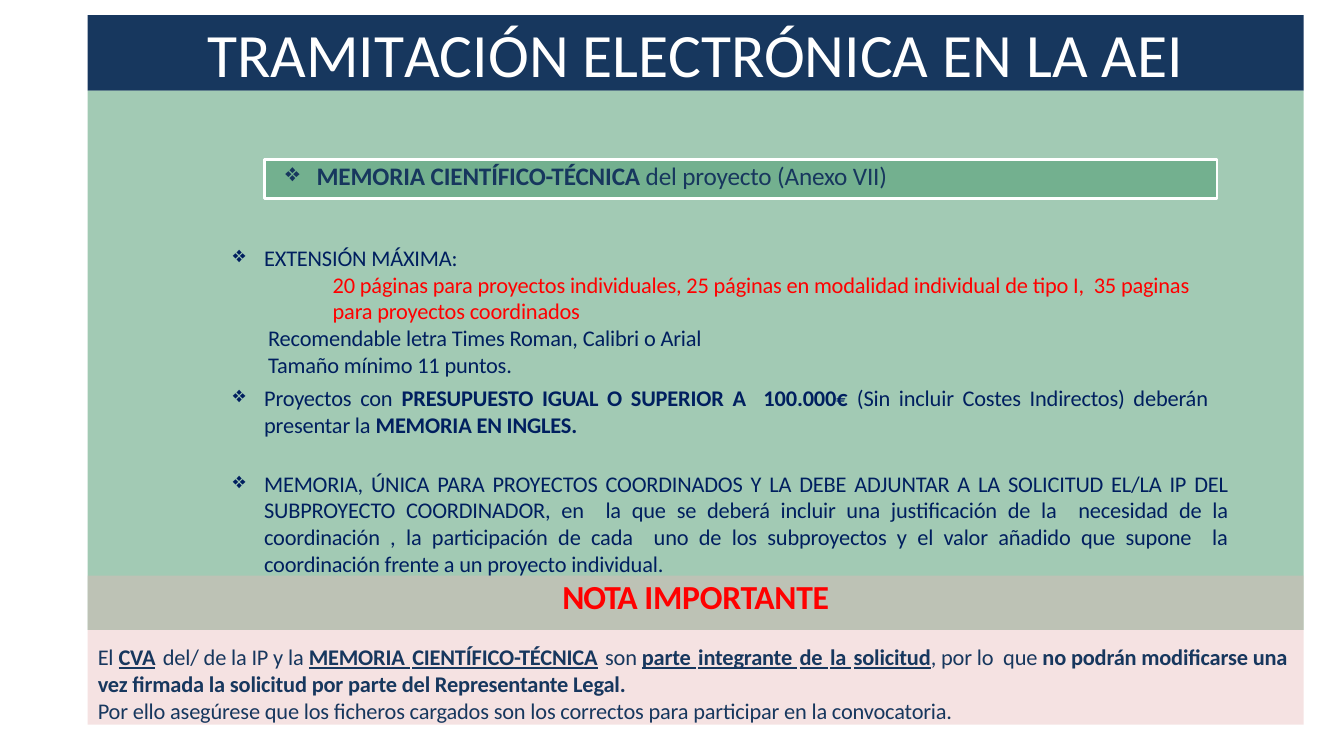
from dataclasses import dataclass
from lxml.etree import SubElement
from pptx import Presentation
from pptx.dml.color import RGBColor
from pptx.enum.shapes import MSO_SHAPE
from pptx.enum.text import MSO_ANCHOR, PP_ALIGN
from pptx.oxml.ns import qn
from pptx.util import Inches, Pt


@dataclass(frozen=True)
class Theme:
    font: str = "Calibri"
    navy: str = "17375E"
    text: str = "001F5F"
    red: str = "FF0000"
    white: str = "FFFFFF"
    green: str = "46976B"
    pink: str = "E6B8B8"
    title: int = 44
    note: int = 24
    heading: int = 18
    body: int = 16
    tracking: float = -0.1
    wide: float = 1.6


THEME = Theme()


@dataclass(frozen=True)
class Para:
    """Runs are (text, flags, tracking): b is bold, u is underlined."""
    runs: tuple
    size: int = THEME.body
    color: str = THEME.text
    indent: float = 0
    bullet: bool = False
    align: PP_ALIGN = PP_ALIGN.LEFT
    before: float = 0


def run(text, flags="", tracking=THEME.tracking):
    return text, flags, tracking


def underlined(phrase):
    """Bold underlined words, parted by wide spaces."""
    runs = []
    for word in phrase.split():
        if runs:
            runs.append(run(" ", "bu", THEME.wide))
        runs.append(run(word, "bu"))
    return runs


WIDE_GAP = run(" ", "b", THEME.wide)

TITLE = Para((run("TRAMI", "", 0), run("T", "", -1.8),
              run("ACIÓN ELECTRÓNICA EN LA AEI", "", 0)),
             THEME.title, THEME.white, align=PP_ALIGN.CENTER)

HEADING = Para((run("MEMORIA CIENTÍFICO-TÉCNICA ", "b"), run("del proyecto (Anexo VII)")),
               THEME.heading, THEME.navy, 0.52, True)

# (top, width, height, paragraphs)
REQUIREMENTS = [
    (2.41, 9.9, 1.36, [
        Para((run("EXTENSIÓN MÁXIMA:"),), indent=0.33, bullet=True),
        Para((run("20 páginas para proyectos individuales, 25 páginas en modalidad "
                  "individual de tipo I,  35 paginas para proyectos coordinados"),),
             color=THEME.red, indent=1.01),
        Para((run("Recomendable letra Times Roman, Calibri o Arial"),), indent=0.37),
        Para((run("Tamaño mínimo 11 puntos."),), indent=0.37),
    ]),
    (3.8, 9.78, 0.55, [
        Para((run("Proyectos con "),
              run("PRESUPUESTO IGUAL O SUPERIOR A  100.000€ ", "b"),
              run("(Sin incluir Costes Indirectos) deberán  presentar la "),
              run("MEMORIA EN INGLES.", "b")),
             indent=0.33, bullet=True, align=PP_ALIGN.JUSTIFY),
    ]),
    (4.65, 9.9, 1.09, [
        Para((run("MEMORIA, ÚNICA PARA PROYECTOS COORDINADOS Y LA DEBE ADJUNTAR A LA "
                  "SOLICITUD EL/LA IP DEL SUBPROYECTO COORDINADOR, en  la que se deberá "
                  "incluir una justificación de la  necesidad de la coordinación , la "
                  "participación de cada  uno de los subproyectos y el valor añadido que "
                  "supone  la coordinación frente a un proyecto individual."),),
             indent=0.33, bullet=True, align=PP_ALIGN.JUSTIFY),
    ]),
]

NOTE = [
    Para((run("NOTA ", "b", -0.7), run("IMPORTANTE", "b", -0.2)),
         THEME.note, THEME.red, align=PP_ALIGN.CENTER),
    Para((run("El "), *underlined("CVA"), WIDE_GAP, run("del/ de la IP y la "),
          *underlined("MEMORIA CIENTÍFICO-TÉCNICA"), WIDE_GAP, run("son "),
          *underlined("parte integrante de la solicitud"), run(", por lo  que "),
          run("no podrán modificarse una vez firmada la solicitud por parte del "
              "Representante Legal.", "b")),
         color=THEME.navy, indent=0.1, before=19.3),
    Para((run("Por ello asegúrese que los ficheros cargados son los correctos para "
              "participar en la convocatoria."),), color=THEME.navy, indent=0.1),
]

SLIDE_SIZE = (13.33, 7.5)
LEFT, WIDTH = 0.87, 12.06
TITLE_TOP, TITLE_HEIGHT = 0.15, 0.75
BAND_TOP, BAND_HEIGHT = TITLE_TOP + TITLE_HEIGHT, 5.35
NOTE_TOP, NOTE_HEIGHT = 5.71, 1.48
HEADING_BOX = (2.62, 1.58, 9.45, 0.39)
REQUIREMENTS_LEFT = 2.29
HANGING = 0.31
INSET_TOP = 0.01


def set_indent(paragraph, indent, bullet):
    props = paragraph._p.get_or_add_pPr()
    props.set("marL", str(Inches(indent)))
    props.set("indent", str(Inches(-HANGING if bullet else 0)))
    if bullet:
        SubElement(props, qn("a:buChar")).set("char", "❖")
        tabs = SubElement(props, qn("a:tabLst"))
        SubElement(tabs, qn("a:tab"), pos=str(Inches(indent)), algn="l")
    else:
        SubElement(props, qn("a:buNone"))


def write(frame, paras, inset_top=INSET_TOP):
    frame.word_wrap = True
    frame.vertical_anchor = MSO_ANCHOR.TOP
    frame.margin_left = frame.margin_right = frame.margin_bottom = 0
    frame.margin_top = Inches(inset_top)
    for index, para in enumerate(paras):
        paragraph = frame.add_paragraph() if index else frame.paragraphs[0]
        set_indent(paragraph, para.indent, para.bullet)
        paragraph.alignment = para.align
        paragraph.space_before = Pt(para.before)
        paragraph.font.name = THEME.font
        paragraph.font.size = Pt(para.size)
        paragraph.font.color.rgb = RGBColor.from_string(para.color)
        for text, flags, tracking in para.runs:
            piece = paragraph.add_run()
            piece.text = text
            if "b" in flags:
                piece.font.bold = True
            if "u" in flags:
                piece.font.underline = True
            piece._r.get_or_add_rPr().set("spc", str(round(tracking * 100)))


def paint(shape, color, opacity=100):
    shape.fill.solid()
    shape.fill.fore_color.rgb = RGBColor.from_string(color)
    if opacity < 100:
        srgb = shape._element.spPr.find(qn("a:solidFill")).find(qn("a:srgbClr"))
        SubElement(srgb, qn("a:alpha")).set("val", str(opacity * 1000))


def add_panel(slide, box, color, opacity):
    panel = slide.shapes.add_shape(MSO_SHAPE.RECTANGLE, *map(Inches, box))
    panel.shadow.inherit = False
    panel.line.fill.background()
    paint(panel, color, opacity)
    return panel


def main():
    deck = Presentation()
    deck.slide_width, deck.slide_height = map(Inches, SLIDE_SIZE)
    slide = deck.slides.add_slide(deck.slide_layouts[5])

    title = slide.shapes.title
    title.left, title.top = Inches(LEFT), Inches(TITLE_TOP)
    title.width, title.height = Inches(WIDTH), Inches(TITLE_HEIGHT)
    paint(title, THEME.navy)
    write(title.text_frame, [TITLE])

    add_panel(slide, (LEFT, BAND_TOP, WIDTH, BAND_HEIGHT), THEME.green, 50)
    for top, width, height, paras in REQUIREMENTS:
        box = map(Inches, (REQUIREMENTS_LEFT, top, width, height))
        write(slide.shapes.add_textbox(*box).text_frame, paras)

    heading = add_panel(slide, HEADING_BOX, THEME.green, 50)
    heading.line.color.rgb = RGBColor.from_string(THEME.white)
    heading.line.width = Pt(2.04)
    write(heading.text_frame, [HEADING])

    note = add_panel(slide, (LEFT, NOTE_TOP, WIDTH, NOTE_HEIGHT), THEME.pink, 40)
    write(note.text_frame, NOTE, inset_top=0)

    deck.save("out.pptx")


if __name__ == "__main__":
    main()
